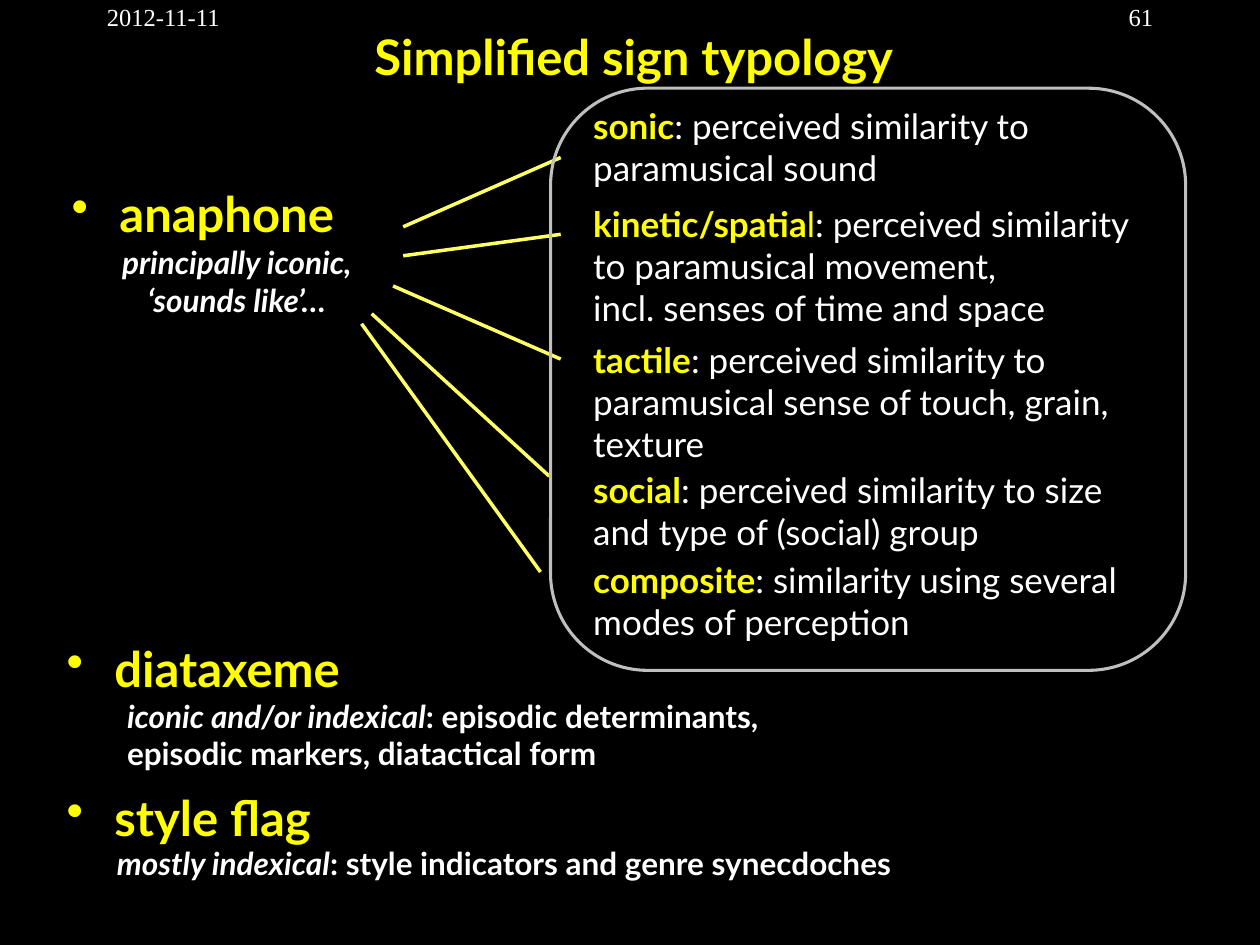
from lxml import etree
from pptx import Presentation
from pptx.dml.color import RGBColor
from pptx.enum.shapes import MSO_CONNECTOR, MSO_SHAPE
from pptx.enum.text import MSO_AUTO_SIZE, PP_ALIGN
from pptx.oxml.ns import qn
from pptx.util import Inches, Pt

LEFT, CENTER, RIGHT = PP_ALIGN.LEFT, PP_ALIGN.CENTER, PP_ALIGN.RIGHT
STRAIGHT = MSO_CONNECTOR.STRAIGHT
ROUNDED = MSO_SHAPE.ROUNDED_RECTANGLE
GROW = MSO_AUTO_SIZE.SHAPE_TO_FIT_TEXT
FIXED = MSO_AUTO_SIZE.NONE
COLORS = {"black": "000000", "white": "FFFFFF", "yellow": "FFFF00",
          "ray": "FFFF66", "frame": "BFBFBF"}

deck = Presentation()
deck.slide_width, deck.slide_height = Inches(10), Inches(7.5)
COL = deck.slide_width / 100
ROW = deck.slide_height / 75
slide = deck.slides.add_slide(deck.slide_layouts[6])
slide.background.fill.solid()
slide.background.fill.fore_color.rgb = RGBColor.from_string(COLORS["black"])


def cells(left, top, width, height):
    return round(left * COL), round(top * ROW), round(width * COL), round(height * ROW)


def write(paragraphs, area, size, font="Lato", align=LEFT, fit=GROW, bullet=False):
    frame = slide.shapes.add_textbox(*cells(*area)).text_frame
    frame.word_wrap = True
    frame.auto_size = fit
    for number, parts in enumerate(paragraphs):
        paragraph = frame.add_paragraph() if number else frame.paragraphs[0]
        paragraph.alignment = align
        if bullet:
            props = paragraph._p.get_or_add_pPr()
            props.set("marL", str(Inches(0.38)))
            props.set("indent", str(-Inches(0.38)))
            before = etree.SubElement(props, qn("a:spcBef"))
            etree.SubElement(before, qn("a:spcPct")).set("val", "20000")
            etree.SubElement(props, qn("a:buChar")).set("char", "•")
        for text, color, style in parts:
            for index, line in enumerate(text.split("\n")):
                if index:
                    paragraph.add_line_break()
                run = paragraph.add_run()
                run.text = line
                run.font.name = font
                run.font.size = Pt(size)
                run.font.bold = "b" in style
                run.font.italic = "i" in style
                run.font.color.rgb = RGBColor.from_string(COLORS[color])


write([[("Simplified sign typology", "yellow", "b")]], (7.8, 1.6, 85, 6.2), 28,
      align=CENTER, fit=FIXED)
for label, left, align in [("2012-11-11", 7.5, LEFT), ("61", 71.7, RIGHT)]:
    write([[(label, "white", "")]], (left, -0.3, 20.8, 5), 14,
          font="Times New Roman", align=align, fit=FIXED)

rays = [
    (32, 18, 44.5, 12.5),
    (32, 20.3, 44.5, 18.6),
    (31.2, 22.7, 44.5, 28.5),
    (29.5, 24.9, 43.6, 37.8),
    (28.7, 25.7, 42.9, 45.4),
]
for ends in rays:
    ray = slide.shapes.add_connector(STRAIGHT, *cells(*ends))
    ray.line.color.rgb = RGBColor.from_string(COLORS["ray"])
    ray.line.width = Pt(2)
    etree.SubElement(ray._element.spPr, qn("a:effectLst"))

anaphone_frame = slide.shapes.add_shape(ROUNDED, *cells(43.7, 7, 50.4, 46.2))
anaphone_frame.shadow.inherit = False
anaphone_frame.fill.background()
anaphone_frame.line.color.rgb = RGBColor.from_string(COLORS["frame"])
anaphone_frame.line.width = Pt(1.75)

anaphone_types = [
    ("sonic", "", ": perceived similarity to paramusical sound", 7.8, 40.6, 7.7),
    ("kinetic/spatia", "l", ": perceived similarity \nto paramusical movement,\n"
     "incl. senses of time and space", 15.6, 52.3, 11.1),
    ("tactile", "", ": perceived similarity to paramusical sense of touch, grain, texture",
     26.4, 43.8, 11.1),
    ("social", "", ": perceived similarity to size and type of (social) group",
     36.7, 43.8, 7.7),
    ("composite", "", ": similarity using several modes of perception", 43.8, 43.8, 7.7),
]
for term, term_end, meaning, top, width, height in anaphone_types:
    parts = [(term, "yellow", "b"), (term_end, "yellow", ""), (meaning, "white", "")]
    write([[part for part in parts if part[0]]], (46.1, top, width, height), 20)

sign_types = [
    ("anaphone", (4.7, 14.1, 27.7, 7)),
    ("diataxeme", (4.3, 50.2, 40.2, 4.7)),
    ("style flag", (4.3, 62, 40.2, 7)),
]
for sign, area in sign_types:
    write([[(sign, "yellow", "b")]], area, 28, fit=FIXED, bullet=True)

write([[("principally iconic,", "white", "bi")], [("‘sounds like’…", "white", "bi")]],
      (6.5, 18.8, 24.6, 7.1), 18, align=CENTER)
sign_notes = [
    ("iconic and/or indexical",
     ": episodic determinants, \nepisodic markers, diatactical form", (9.1, 54.8, 74.8, 7.1)),
    ("mostly indexical",
     ": style indicators and genre synecdoches", (8.3, 66.5, 74.8, 4)),
]
for mode, detail, area in sign_notes:
    write([[(mode, "white", "bi"), (detail, "white", "b")]], area, 18)

deck.save("out.pptx")
